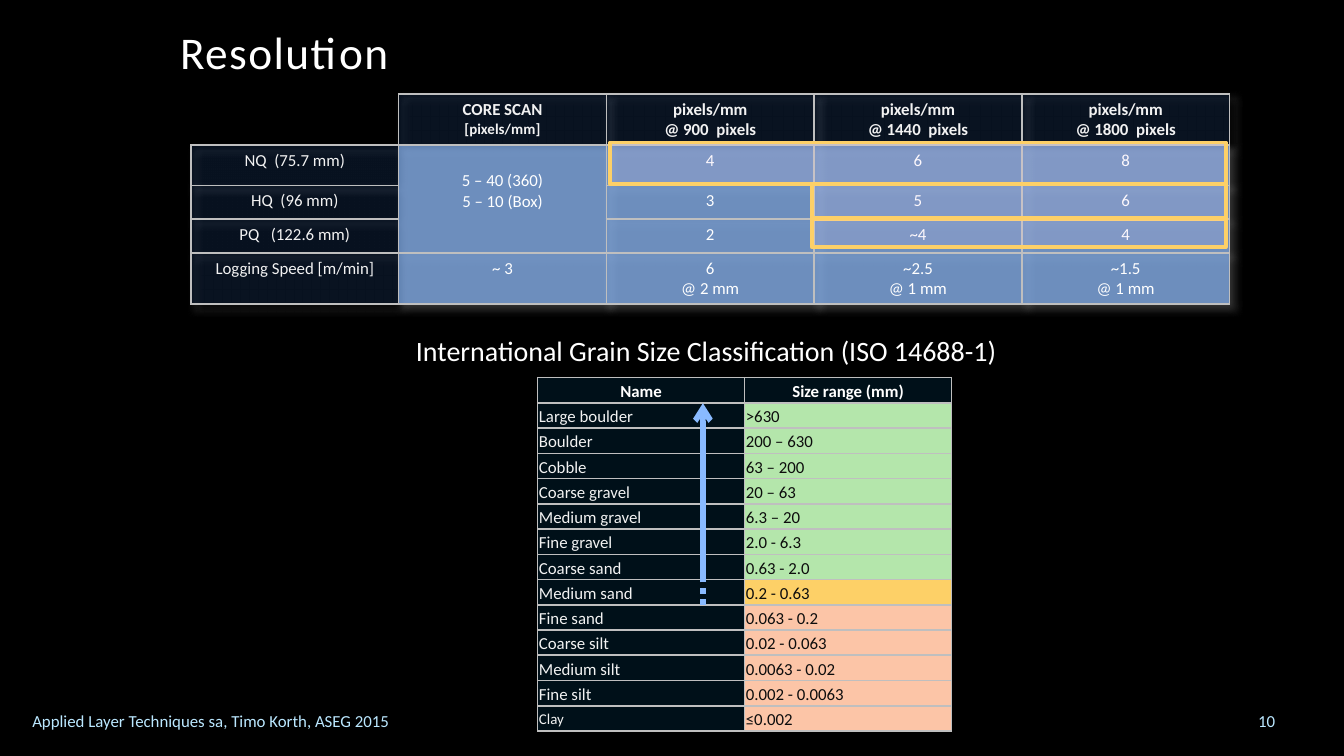
from lxml import etree
from pptx import Presentation
from pptx.dml.color import RGBColor
from pptx.enum.dml import MSO_LINE
from pptx.enum.shapes import MSO_CONNECTOR, MSO_SHAPE
from pptx.enum.text import MSO_ANCHOR, PP_ALIGN
from pptx.oxml import parse_xml
from pptx.oxml.ns import qn
from pptx.util import Inches, Pt

LEFT, CENTER = PP_ALIGN.LEFT, PP_ALIGN.CENTER
TOP, MIDDLE, BOTTOM = MSO_ANCHOR.TOP, MSO_ANCHOR.MIDDLE, MSO_ANCHOR.BOTTOM
STRAIGHT, RECTANGLE = MSO_CONNECTOR.STRAIGHT, MSO_SHAPE.RECTANGLE
DOTTED = MSO_LINE.ROUND_DOT

FONT = "Calibri"
NS = 'xmlns:a="http://schemas.openxmlformats.org/drawingml/2006/main"'
NO_STYLE = "{2D5ABB26-0587-4C30-8999-92F81FD0307C}"
WHITE, PALE, DARK, SKY = "FFFFFF", "F2F2F2", "0D0D0D", "BBE8FF"
GRID, NAVY, BLUE, TEAL = "BFBFBF", "1474FF", "89BAFF", "0070AB"
GREEN, AMBER, PEACH, PINK = "B4E6AB", "FDD067", "FCC5A7", "F8D6F4"

RESOLUTION = [
    ["", "CORE SCAN\n[pixels/mm]", "pixels/mm\n@ 900  pixels",
     "pixels/mm\n@ 1440  pixels", "pixels/mm\n@ 1800  pixels"],
    ["NQ  (75.7 mm)", "5 – 40 (360)\n5 – 10 (Box)", "4", "6", "8"],
    ["HQ  (96 mm)", "", "3", "5", "6"],
    ["PQ   (122.6 mm)", "", "2", "~4", "4"],
    ["Logging Speed [m/min]", "~ 3", "6\n@ 2 mm", "~2.5\n@ 1 mm", "~1.5\n@ 1 mm"],
]
GRAIN_SIZES = [
    ("Large boulder", ">630", GREEN),
    ("Boulder", "200 – 630", GREEN),
    ("Cobble", "63 – 200", GREEN),
    ("Coarse gravel", "20 – 63", GREEN),
    ("Medium gravel", "6.3 – 20", GREEN),
    ("Fine gravel", "2.0 - 6.3", GREEN),
    ("Coarse sand", "0.63 - 2.0", GREEN),
    ("Medium sand", "0.2 - 0.63", AMBER),
    ("Fine sand", "0.063 - 0.2", PEACH),
    ("Coarse silt", "0.02 - 0.063", PEACH),
    ("Medium silt", "0.0063 - 0.02", PEACH),
    ("Fine silt", "0.002 - 0.0063", PEACH),
    ("Clay", "≤0.002", PEACH),
]


def rgb(color):
    return RGBColor.from_string(color)


def set_fill(fill, color, alpha=100):
    fill.solid()
    fill.fore_color.rgb = rgb(color)
    if alpha < 100:
        clr = fill._xPr.find(qn("a:solidFill"))[0]
        etree.SubElement(clr, qn("a:alpha")).set("val", str(alpha * 1000))


def set_text(tf, text, size, color, align=LEFT, bold=False, spacing=None):
    tf.word_wrap = True
    for i, line in enumerate(text.split("\n")):
        p = tf.paragraphs[0] if i == 0 else tf.add_paragraph()
        p.alignment = align
        if spacing:
            p.line_spacing = spacing
        p.font.name, p.font.size, p.font.bold = FONT, Pt(size), bold
        p.font.color.rgb = rgb(color)
        if line:
            p.add_run().text = line
        else:
            p._p.get_or_add_endParaRPr().set("sz", str(size * 100))


def set_margins(box, x, y):
    box.margin_left = box.margin_right = Inches(x)
    box.margin_top = box.margin_bottom = Inches(y)


def add_text(slide, at, text, size, color, align=LEFT, anchor=TOP, spacing=None):
    tf = slide.shapes.add_textbox(*map(Inches, at)).text_frame
    set_margins(tf, 0.09, 0.04)
    tf.vertical_anchor = anchor
    set_text(tf, text, size, color, align, spacing=spacing)
    return tf


def add_grid(slide, left, top, widths, heights):
    frame = slide.shapes.add_table(len(heights), len(widths), Inches(left), Inches(top),
                                   Inches(sum(widths)), Inches(sum(heights)))
    table = frame.table
    table.first_row = table.horz_banding = False
    table._tbl.tblPr.find(qn("a:tableStyleId")).text = NO_STYLE
    for column, width in zip(table.columns, widths):
        column.width = Inches(width)
    for row, height in zip(table.rows, heights):
        row.height = Inches(height)
    return table


def set_borders(cell, sides="LRTB"):
    for i, side in enumerate(sides):
        cell._tc.get_or_add_tcPr().insert(i, parse_xml(
            f'<a:ln{side} {NS} w="12700"><a:solidFill><a:srgbClr val="{GRID}"/>'
            f'</a:solidFill></a:ln{side}>'))


def add_resolution_table(slide):
    table = add_grid(slide, 1.42, 0.7, [7.73 / 5] * 5, [0.38, 0.3, 0.25, 0.25, 0.38])
    table._tbl.tblPr.insert(0, parse_xml(
        f'<a:effectLst {NS}><a:outerShdw blurRad="50800" dist="38100" dir="2700000">'
        f'<a:srgbClr val="{WHITE}"><a:alpha val="30000"/></a:srgbClr>'
        f'</a:outerShdw></a:effectLst>'))
    for r, row in enumerate(RESOLUTION):
        for c, text in enumerate(row):
            cell = table.cell(r, c)
            label = r == 0 or c == 0
            set_margins(cell, 0.09, 0.04)
            set_text(cell.text_frame, text, 9, PALE if label else WHITE, CENTER, r == 0)
            if r == c == 0:
                set_borders(cell, "RB")
            else:
                set_fill(cell.fill, NAVY if label else BLUE, 10 if label else 68)
                set_borders(cell)
    table.cell(0, 1).text_frame.paragraphs[1].font.size = Pt(8)
    scan = table.cell(1, 1)
    scan.merge(table.cell(3, 1))
    scan.margin_top = Inches(0.19)


def add_grain_table(slide):
    count = len(GRAIN_SIZES) + 1
    table = add_grid(slide, 4, 2.81, [1.54] * 2, [2.63 / count] * count)
    rows = [("Name", "Size range (mm)", TEAL)] + GRAIN_SIZES
    for r, (name, size_range, color) in enumerate(rows):
        header = r == 0
        for c, text in enumerate((name, size_range)):
            cell = table.cell(r, c)
            set_margins(cell, 0.01, 0.01 / 2)
            cell.vertical_anchor = MIDDLE
            ink = WHITE if header else (PALE, DARK)[c]
            set_text(cell.text_frame, text, 8 if text == "Clay" else 9, ink,
                     CENTER if header else LEFT, header, 1.15)
            shaded = header or c == 0
            set_fill(cell.fill, TEAL if shaded else color, 15 if shaded else 100)
            set_borders(cell)


def add_line(slide, x, start, end, dash=None, arrow=False):
    s = slide.shapes.add_connector(STRAIGHT, Inches(x), Inches(start), Inches(x), Inches(end))
    s.line.color.rgb = rgb(BLUE)
    s.line.width = Pt(3)
    if dash:
        s.line.dash_style = dash
    if arrow:
        etree.SubElement(s.line._get_or_add_ln(), qn("a:tailEnd")).set("type", "arrow")
    etree.SubElement(s._element.spPr, qn("a:effectLst"))


def add_highlight(slide, at):
    sp = slide.shapes.add_shape(RECTANGLE, *map(Inches, at))
    sp.shadow.inherit = False
    set_fill(sp.fill, PINK, 15)
    sp.line.color.rgb = rgb(AMBER)
    sp.line.width = Pt(2)


def main():
    prs = Presentation()
    prs.slide_width, prs.slide_height = Inches(10), Inches(10 * 9 / 16)
    slide = prs.slides.add_slide(prs.slide_layouts[6])
    set_fill(slide.background.fill, "000000")

    # Title and footer
    title = add_text(slide, (1.25, 0.19, 7.5, 0.44), "Resolution", 24.3, WHITE,
                     anchor=BOTTOM, spacing=0.9)
    title.paragraphs[0].runs[0]._r.get_or_add_rPr().set("spc", "80")
    add_text(slide, (0.15, 5.25, 6.21, 0.25),
             "Applied Layer Techniques sa, Timo Korth, ASEG 2015", 9, SKY)
    add_text(slide, (9.08, 5.25, 0.69, 0.23), "10", 9, SKY, CENTER)

    # Tables
    add_resolution_table(slide)
    add_text(slide, (1.35, 2.44, 7.81, 0.34),
             "International Grain Size Classification (ISO 14688-1)", 15, WHITE, CENTER)
    add_grain_table(slide)

    # Range of visible grain sizes
    add_line(slide, 5.23, 4.31, 3, arrow=True)
    add_line(slide, 5.23, 4.5, 4.31, dash=DOTTED)

    # Highlighted resolutions
    for at in ((4.54, 1.06, 4.58, 0.31), (6.04, 1.37, 3.08, 0.26), (6.04, 1.62, 3.08, 0.22)):
        add_highlight(slide, at)

    prs.save("out.pptx")


if __name__ == "__main__":
    main()
